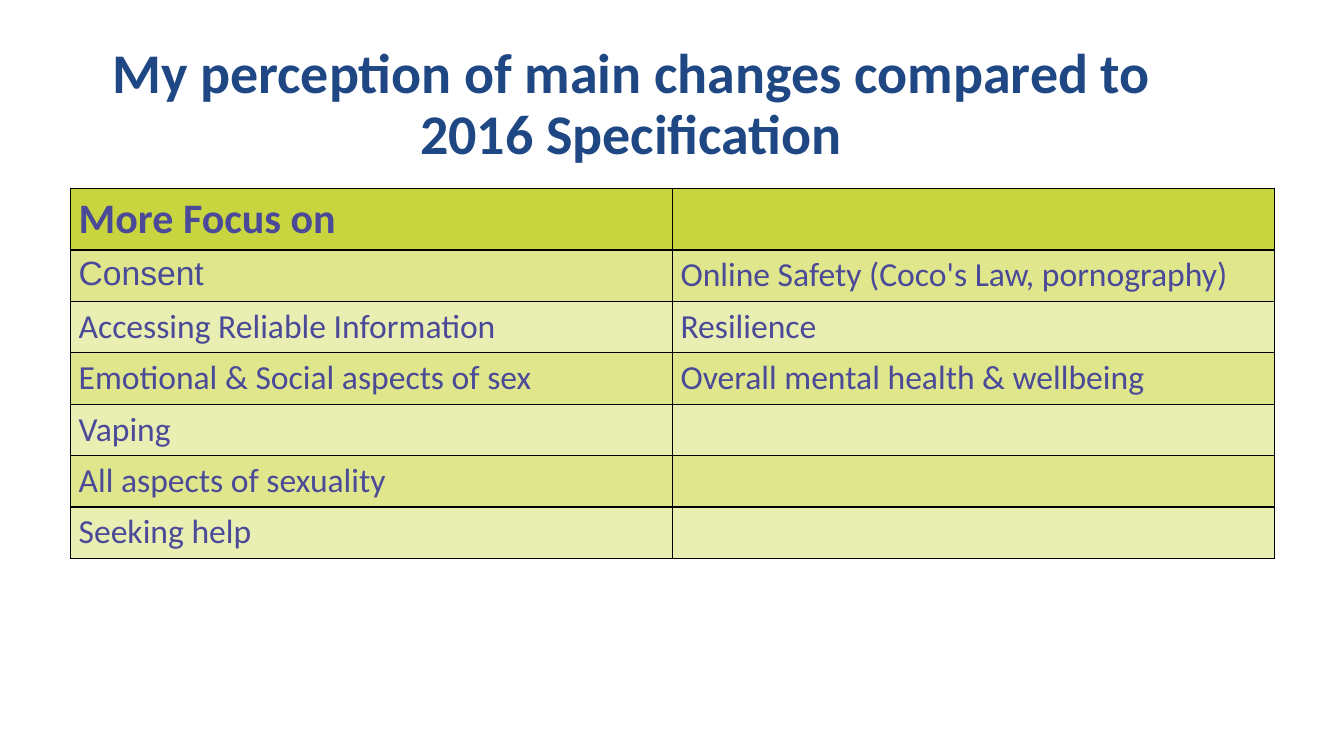
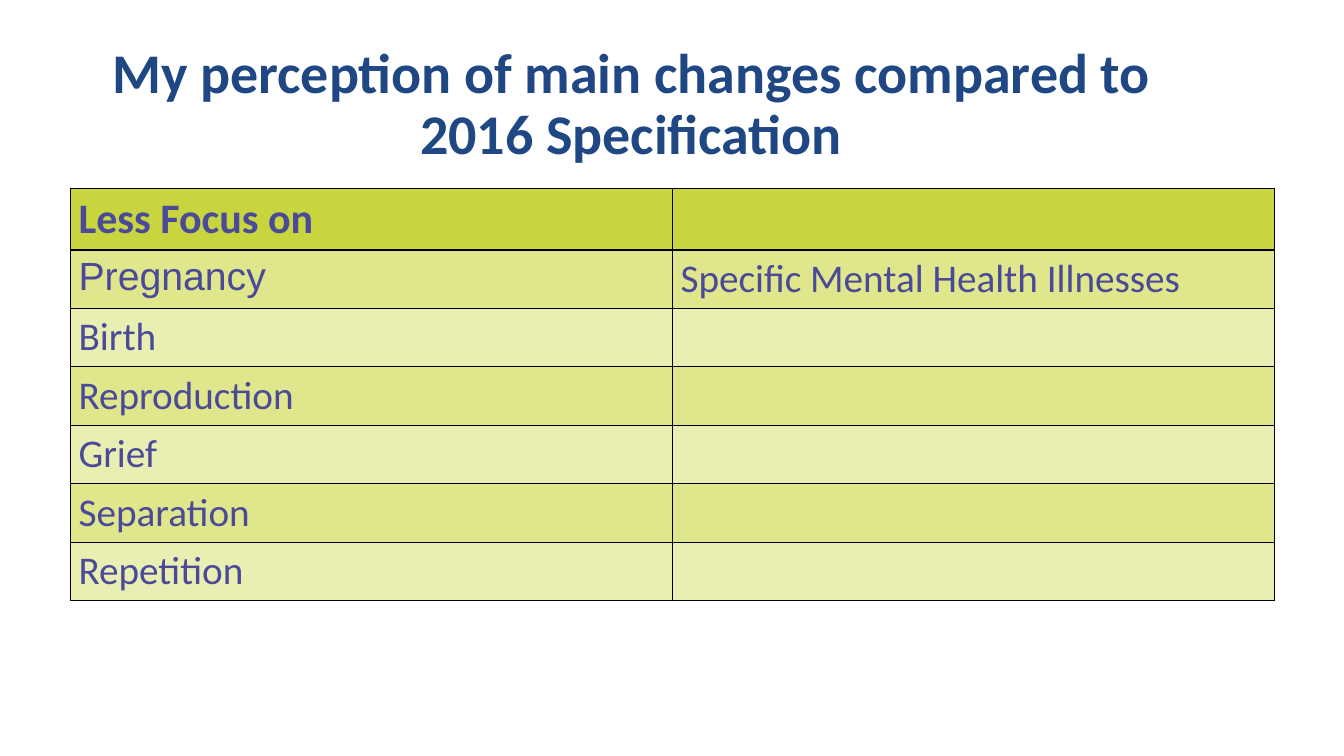
from lxml import etree
from pptx import Presentation
from pptx.dml.color import RGBColor
from pptx.enum.text import MSO_ANCHOR, MSO_AUTO_SIZE, PP_ALIGN
from pptx.oxml.ns import qn
from pptx.util import Inches, Pt

COLORS = {
    "title": "1E4783",
    "text": "4B4A98",
    "header": "C9D53F",
    "odd_row": "DFE68C",
    "even_row": "E9EEB2",
    "border": "000000",
}
FONT = "Calibri"
FIRST_ENTRY_FONT = "Arial"
TITLE = "My perception of main changes compared to 2016 Specification"

SLIDES = [
    {
        "body_size": 24,
        "row_height": 0.51,
        "rows": [
            ("More Focus on", ""),
            ("Consent", "Online Safety (Coco's Law, pornography)"),
            ("Accessing Reliable Information", "Resilience"),
            ("Emotional & Social aspects of sex", "Overall mental health & wellbeing"),
            ("Vaping", ""),
            ("All aspects of sexuality", ""),
            ("Seeking help", ""),
        ],
    },
    {
        "body_size": 28,
        "row_height": 0.58,
        "rows": [
            ("Less Focus on", ""),
            ("Pregnancy", "Specific Mental Health Illnesses"),
            ("Birth", ""),
            ("Reproduction", ""),
            ("Grief", ""),
            ("Separation", ""),
            ("Repetition", ""),
        ],
    },
]

HEADER_SIZE = 30
HEADER_HEIGHT = 0.61
TABLE_LEFT, TABLE_TOP, COLUMN_WIDTH = 0.7, 1.87, 5.97


def format_font(font, name, size, color, bold):
    font.name = name
    font.size = Pt(size)
    font.color.rgb = RGBColor.from_string(COLORS[color])
    font.bold = bold


def add_title(slide):
    title = slide.shapes.title
    title.left, title.top = Inches(0.51), Inches(0.4)
    title.width, title.height = Inches(11.5), Inches(0.68)
    frame = title.text_frame
    frame.text = TITLE
    frame.word_wrap = True
    frame.auto_size = MSO_AUTO_SIZE.NONE
    frame.vertical_anchor = MSO_ANCHOR.TOP
    paragraph = frame.paragraphs[0]
    paragraph.alignment = PP_ALIGN.CENTER
    paragraph.line_spacing = 0.9
    format_font(paragraph.runs[0].font, FONT, 40, "title", True)


def add_borders(cell):
    properties = cell._tc.get_or_add_tcPr()
    for side in ("a:lnL", "a:lnR", "a:lnT", "a:lnB"):
        line = etree.SubElement(properties, qn(side), w=str(Pt(1)))
        fill = etree.SubElement(line, qn("a:solidFill"))
        etree.SubElement(fill, qn("a:srgbClr"), val=COLORS["border"])


def format_cell(cell, text, row, column, body_size):
    add_borders(cell)
    band = "header" if row == 0 else "odd_row" if row % 2 else "even_row"
    cell.fill.solid()
    cell.fill.fore_color.rgb = RGBColor.from_string(COLORS[band])
    cell.margin_left = cell.margin_right = Inches(0.08)
    cell.margin_top = cell.margin_bottom = Inches(0.05)
    if text:
        cell.text_frame.text = text
        font_name = FIRST_ENTRY_FONT if (row, column) == (1, 0) else FONT
        size = body_size if row else HEADER_SIZE
        run = cell.text_frame.paragraphs[0].runs[0]
        format_font(run.font, font_name, size, "text", row == 0)


def add_focus_table(slide, content):
    rows = content["rows"]
    heights = [HEADER_HEIGHT] + [content["row_height"]] * (len(rows) - 1)
    column_count = len(rows[0])
    table = slide.shapes.add_table(
        len(rows), column_count, Inches(TABLE_LEFT), Inches(TABLE_TOP),
        Inches(COLUMN_WIDTH * column_count), Inches(sum(heights)),
    ).table
    for column in table.columns:
        column.width = Inches(COLUMN_WIDTH)
    for row, (texts, height) in enumerate(zip(rows, heights)):
        table.rows[row].height = Inches(height)
        for column, text in enumerate(texts):
            format_cell(table.cell(row, column), text, row, column, content["body_size"])


def main():
    presentation = Presentation()
    presentation.slide_width = Inches(13.33)
    presentation.slide_height = Inches(7.5)
    title_only = presentation.slide_layouts.get_by_name("Title Only")
    for content in SLIDES:
        slide = presentation.slides.add_slide(title_only)
        add_title(slide)
        add_focus_table(slide, content)
    presentation.save("out.pptx")


if __name__ == "__main__":
    main()
